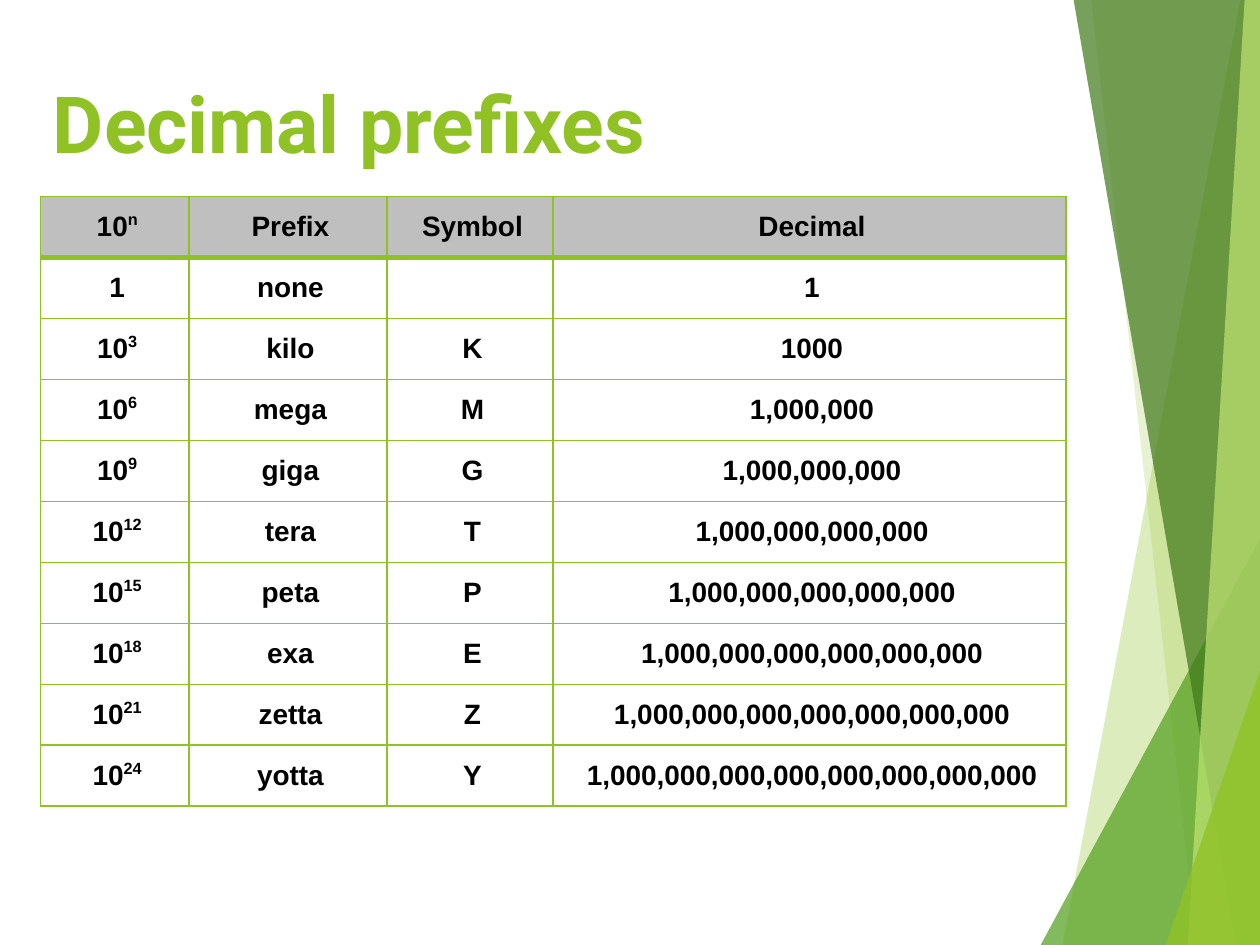
from pptx import Presentation
from pptx import util as u
from pptx.dml import color
from pptx.enum import text
from pptx.oxml import ns
from lxml import etree

WIDE, HIGH = u.Inches(10), u.Inches(7.5)
LIME = color.RGBColor(0x90, 0xC2, 0x26)
LEAF = color.RGBColor(0x54, 0xA0, 0x21)
MOSS = color.RGBColor(0x3F, 0x78, 0x19)
PALE = color.RGBColor(0xC0, 0xE4, 0x74)
GREY = color.RGBColor(0xBF, 0xBF, 0xBF)
BLACK = color.RGBColor(0, 0, 0)

FACETS = [
    (LIME, 30, [(91, 0), (10, 100), (100, 100), (100, 0)]),
    (LIME, 20, [(23, 0), (71, 100), (100, 100), (100, 0)]),
    (LEAF, 72, [(0, 100), (100, 57), (100, 100)]),
    (MOSS, 70, [(15, 0), (89, 100), (100, 100), (100, 0)]),
    (PALE, 70, [(93, 0), (67, 100), (100, 100), (100, 0)]),
    (LIME, 80, [(57, 100), (100, 71), (100, 100)]),
]
HEADS = ["Prefix", "Symbol", "Decimal"]
NAMES = ["kilo", "mega", "giga", "tera", "peta", "exa", "zetta", "yotta"]
COLS = [1.18, 1.57, 1.32, 4.07]


def share(left, top, width, height):
    """Turn percentages of the slide into a box."""
    return [int(side * part / 100) for side, part in
            zip((WIDE, HIGH, WIDE, HIGH), (left, top, width, height))]


def write(para, words, font="Arial", size=16, ink=BLACK, lift=0):
    """Add one bold run, raised by a percentage if asked."""
    run = para.add_run()
    run.text = words
    face = run.font
    face.name, face.size, face.bold = font, u.Pt(size), True
    face.color.rgb = ink
    if lift:
        run._r.get_or_add_rPr().set("baseline", str(lift * 1000))


def edge(cell, side, width):
    """Draw one border of a cell."""
    line = etree.SubElement(cell._tc.get_or_add_tcPr(), ns.qn("a:ln" + side),
                            w=str(u.Pt(width)))
    fill = etree.SubElement(line, ns.qn("a:solidFill"))
    etree.SubElement(fill, ns.qn("a:srgbClr"), val=str(LIME))


def facets(slide, box):
    """Fill the side band with overlapping clear facets."""
    left, top, width, height = box
    for ink, alpha, marks in FACETS:
        spots = [(left + width * x / 100, top + height * y / 100)
                 for x, y in marks]
        path = slide.shapes.build_freeform(*spots[0])
        path.add_line_segments(spots[1:], close=True)
        shape = path.convert_to_shape()
        shape.shadow.inherit = False
        shape.line.fill.background()
        shape.fill.solid()
        shape.fill.fore_color.rgb = ink
        tint = shape._element.spPr.find(".//" + ns.qn("a:srgbClr"))
        etree.SubElement(tint, ns.qn("a:alpha"), val=str(alpha * 1000))


def title(slide, box, words):
    """Place the slide title in its box."""
    head = slide.shapes.title
    head.left, head.top, head.width, head.height = box
    frame = head.text_frame
    frame.vertical_anchor = text.MSO_ANCHOR.MIDDLE
    para = frame.paragraphs[0]
    para.alignment = text.PP_ALIGN.LEFT
    write(para, words, font="Roboto", size=45, ink=LIME)


def rows():
    """List the table rows, each led by a base and its power."""
    out = [[("10", "n"), *HEADS], [("1", ""), "none", "", "1"]]
    for step, name in enumerate(NAMES, 1):
        whole = "1000" if step == 1 else "1" + ",000" * step
        out.append([("10", str(3 * step)), name, name[0].upper(), whole])
    return out


def fill_cell(cell, item, row):
    """Format one cell and write its text."""
    cell.margin_left = cell.margin_right = u.Inches(0.06)
    cell.margin_top = cell.margin_bottom = u.Inches(0.06)
    cell.vertical_anchor = text.MSO_ANCHOR.MIDDLE
    for side in "LRTB":
        edge(cell, side, 3 if (row, side) in ((0, "B"), (1, "T")) else 1)
    if row:
        cell.fill.background()
    else:
        cell.fill.solid()
        cell.fill.fore_color.rgb = GREY
    para = cell.text_frame.paragraphs[0]
    para.alignment = text.PP_ALIGN.CENTER
    para._p.get_or_add_pPr().set("marL", str(u.Inches(0.04)))
    base, power = item if isinstance(item, tuple) else (item, "")
    if base:
        write(para, base)
    if power:
        write(para, power, lift=40)


def table(slide, box, data):
    """Lay out the prefix table with weighted columns and equal rows."""
    grid = slide.shapes.add_table(len(data), len(COLS), *box).table
    grid.horz_banding = False
    for col, part in zip(grid.columns, COLS):
        col.width = int(box[2] * part / sum(COLS))
    for row, items in enumerate(data):
        grid.rows[row].height = box[3] // len(data)
        for col, item in enumerate(items):
            fill_cell(grid.cell(row, col), item, row)


def main():
    """Build and save the slide."""
    deck = Presentation()
    deck.slide_width, deck.slide_height = WIDE, HIGH
    slide = deck.slides.add_slide(deck.slide_layouts[5])
    facets(slide, share(82.6, 0, 17.4, 100))
    title(slide, share(3.2, 4.93, 79.4, 15.87), "Decimal prefixes")
    table(slide, share(3.2, 20.8, 81.4, 64.53), rows())
    deck.save("out.pptx")


if __name__ == "__main__":
    main()
